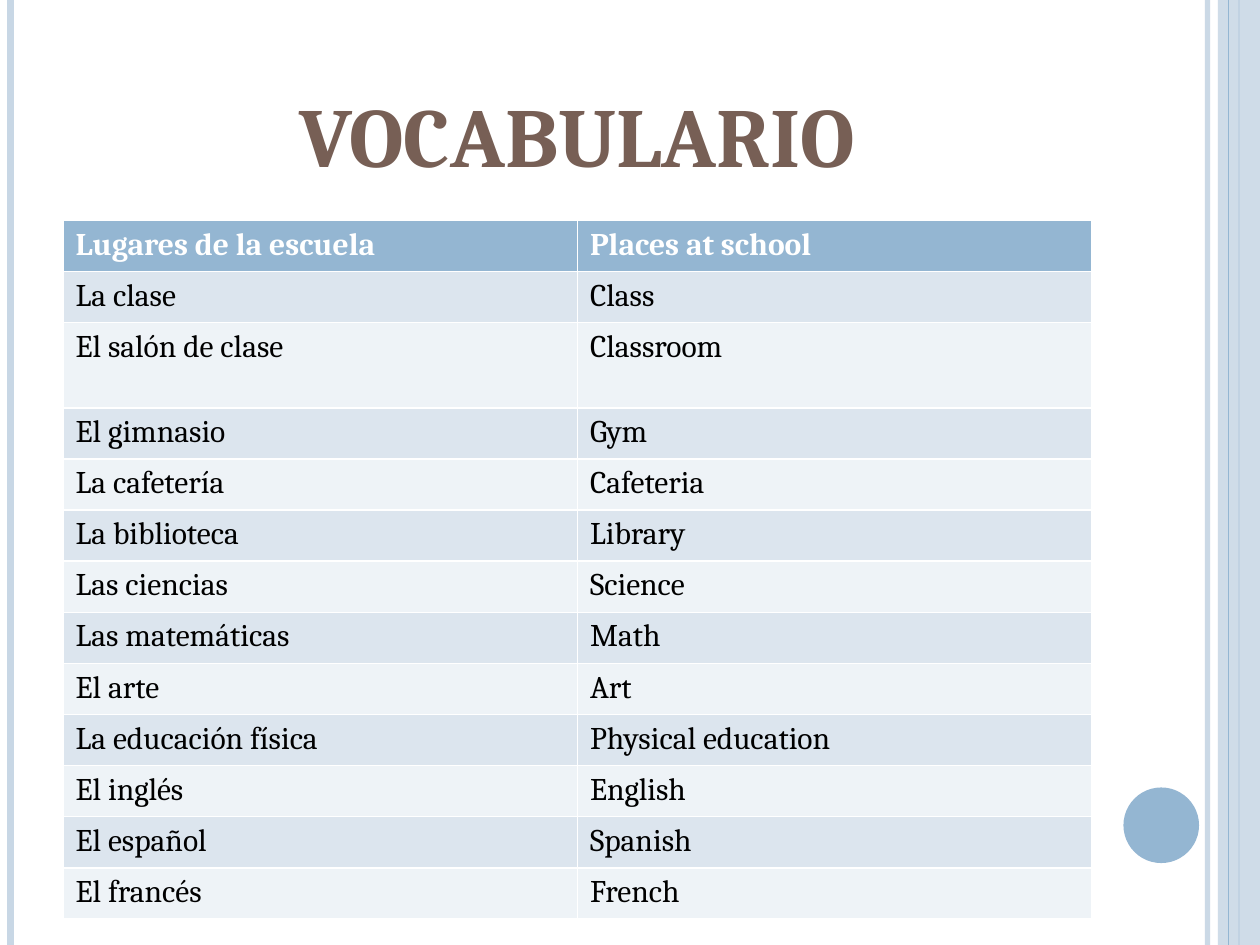
from dataclasses import dataclass
from typing import NamedTuple

from lxml.etree import SubElement
from pptx import Presentation
from pptx.dml.color import RGBColor as RGB
from pptx.enum.shapes import MSO_CONNECTOR as Connector, MSO_SHAPE as Shape
from pptx.enum.text import MSO_ANCHOR as Anchor, PP_ALIGN as Align
from pptx.oxml.ns import qn
from pptx.util import Pt


@dataclass(frozen=True)
class Theme:
    font: str = "Cambria"
    title_size: int = 60
    body_size: int = 18
    title: RGB = RGB.from_string("775F55")
    accent: RGB = RGB.from_string("94B6D2")
    pale: RGB = RGB.from_string("C8D7E5")
    bands: tuple = (RGB.from_string("DCE5EE"), RGB.from_string("EEF3F7"))
    white: RGB = RGB.from_string("FFFFFF")
    black: RGB = RGB.from_string("000000")


class Rule(NamedTuple):
    x: float
    width: float
    color: RGB
    opacity: int = 100


class Panel(NamedTuple):
    kind: Shape
    left: float
    top: float
    width: float
    height: float
    color: RGB
    opacity: int = 100


class Entry(NamedTuple):
    spanish: str
    english: str
    height: float = 29.2


THEME = Theme()
SLIDE_W, SLIDE_H = 720, 540
LEFT, CONTENT_W = 36, 588

DECORATION = [
    Rule(690, 3, THEME.pale, 93),
    Rule(6, 4.5, THEME.pale),
    Rule(708, 1.5, THEME.accent),
    Panel(Shape.RECTANGLE, 696, 0, 24, SLIDE_H, THEME.pale, 87),
    Rule(702, 0.75, THEME.accent),
    Panel(Shape.OVAL, 642, 450, 43.2, 43.2, THEME.accent),
]

VOCABULARY = [
    Entry("Lugares de la escuela", "Places at school"),
    Entry("La clase", "Class"),
    Entry("El salón de clase", "Classroom", 48.7),
    Entry("El gimnasio", "Gym"),
    Entry("La cafetería", "Cafeteria"),
    Entry("La biblioteca", "Library"),
    Entry("Las ciencias", "Science"),
    Entry("Las matemáticas", "Math"),
    Entry("El arte", "Art"),
    Entry("La educación física", "Physical education"),
    Entry("El inglés", "English"),
    Entry("El español", "Spanish"),
    Entry("El francés", "French"),
]


def set_opacity(sp, percent: int) -> None:
    if percent < 100:
        color = next(sp._element.spPr.iter(qn("a:srgbClr")))
        SubElement(color, qn("a:alpha")).set("val", str(percent * 1000))


def draw_rule(s, rule: Rule) -> None:
    line = s.shapes.add_connector(
        Connector.STRAIGHT, Pt(rule.x), Pt(0), Pt(rule.x), Pt(SLIDE_H))
    line.line.color.rgb = rule.color
    line.line.width = Pt(rule.width)
    set_opacity(line, rule.opacity)
    SubElement(line._element.spPr, qn("a:effectLst"))


def draw_panel(s, panel: Panel) -> None:
    sp = s.shapes.add_shape(panel.kind, Pt(panel.left), Pt(panel.top),
                            Pt(panel.width), Pt(panel.height))
    sp.shadow.inherit = False
    sp.fill.solid()
    sp.fill.fore_color.rgb = panel.color
    sp.line.fill.background()
    set_opacity(sp, panel.opacity)


def style_text(p, size: int, color: RGB, bold: bool) -> None:
    p.font.name = THEME.font
    p.font.size = Pt(size)
    p.font.color.rgb = color
    p.font.bold = bold


def draw_title(s, text: str) -> None:
    sp = s.shapes.title
    sp.left, sp.top = Pt(LEFT), Pt(21.6)
    sp.width, sp.height = Pt(CONTENT_W), Pt(90)
    tf = sp.text_frame
    tf.vertical_anchor = Anchor.BOTTOM
    p = tf.paragraphs[0]
    p.alignment = Align.CENTER
    r = p.add_run()
    r.text = text
    style_text(p, THEME.title_size, THEME.title, True)
    r._r.get_or_add_rPr().set("cap", "small")


def draw_table(s, entries: list[Entry]) -> None:
    height = sum(entry.height for entry in entries)
    # The default table style supplies the white cell borders
    table = s.shapes.add_table(len(entries), 2, Pt(LEFT), Pt(126),
                               Pt(CONTENT_W), Pt(height)).table
    for i, entry in enumerate(entries):
        header = i == 0
        table.rows[i].height = Pt(entry.height)
        for j, text in enumerate((entry.spanish, entry.english)):
            cell = table.cell(i, j)
            cell.text = text
            cell.fill.solid()
            cell.fill.fore_color.rgb = (
                THEME.accent if header else THEME.bands[(i - 1) % 2])
            style_text(cell.text_frame.paragraphs[0], THEME.body_size,
                       THEME.white if header else THEME.black, header)


def main() -> None:
    prs = Presentation()
    prs.slide_width, prs.slide_height = Pt(SLIDE_W), Pt(SLIDE_H)
    s = prs.slides.add_slide(prs.slide_layouts[5])

    # Side bands and circle
    for item in DECORATION:
        if isinstance(item, Rule):
            draw_rule(s, item)
        else:
            draw_panel(s, item)

    # Title and word list
    draw_title(s, "vocabulario")
    draw_table(s, VOCABULARY)
    prs.save("out.pptx")


if __name__ == "__main__":
    main()
